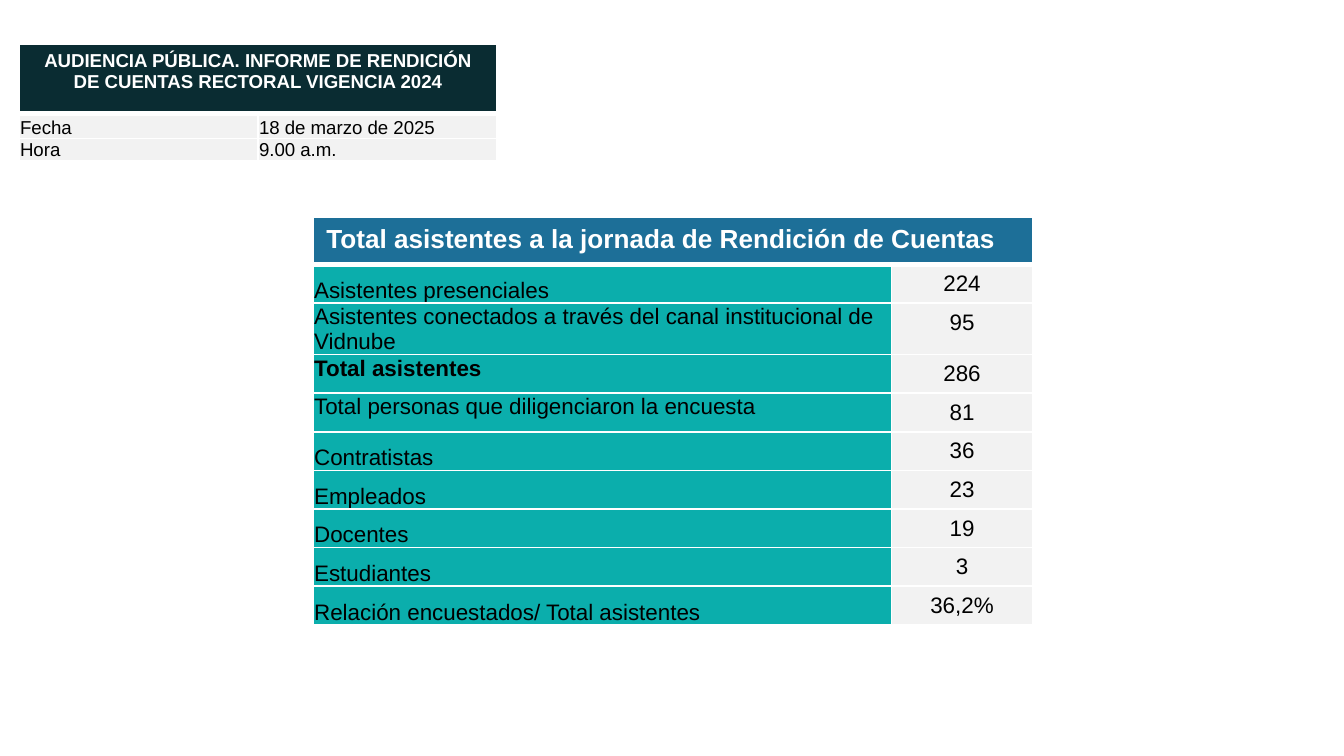
"""Build the attendance slide for the public accountability hearing."""
from lxml.etree import SubElement
from pptx import Presentation
from pptx.dml.color import RGBColor
from pptx.enum.text import MSO_ANCHOR, PP_ALIGN
from pptx.oxml.ns import qn
from pptx.util import Pt

THEME = {
    "font": "Arial", "white": "FFFFFF", "black": "000000", "grey": "F2F2F2",
    "dark": "0A2C32", "blue": "1D6F98", "teal": "0BAEAC",
    "small": 10, "body": 12, "head": 14, "thin": 1, "thick": 3,
}
EVENT = {
    "title": "AUDIENCIA PÚBLICA. INFORME DE RENDICIÓN DE CUENTAS RECTORAL VIGENCIA 2024",
    "rows": [("Fecha", "18 de marzo de 2025"), ("Hora", "9.00 a.m.")],
}
COUNT = {
    "title": "Total asistentes a la jornada de Rendición de Cuentas",
    "rows": [
        ("Asistentes presenciales", "224"),
        ("Asistentes conectados a través del canal institucional de Vidnube", "95"),
        ("Total asistentes", "286"),
        ("Total personas que diligenciaron la encuesta", "81"),
        ("Contratistas", "36"),
        ("Empleados", "23"),
        ("Docentes", "19"),
        ("Estudiantes", "3"),
        ("Relación encuestados/ Total asistentes", "36,2%"),
    ],
}
BOLD = {"Total asistentes"}
UPPER = BOLD | {"Total personas que diligenciaron la encuesta"}


def write(cell, text, size, color="black", bold=False, align=PP_ALIGN.LEFT,
          anchor=MSO_ANCHOR.TOP, tight=False):
    para = cell.text_frame.paragraphs[0]
    para.alignment = align
    run = para.add_run()
    run.text = text
    run.font.name = THEME["font"]
    run.font.size = Pt(size)
    run.font.bold = bold
    run.font.color.rgb = RGBColor.from_string(THEME[color])
    cell.vertical_anchor = anchor
    if tight:
        cell.margin_left = cell.margin_top = cell.margin_right = Pt(0.7)
        cell.margin_bottom = Pt(0)


def paint(cell, fill, top, bottom):
    props = cell._tc.get_or_add_tcPr()
    thin = THEME["thin"]
    for tag, width in (("lnL", thin), ("lnR", thin), ("lnT", top), ("lnB", bottom)):
        line = SubElement(props, qn(f"a:{tag}"), w=str(Pt(width)))
        solid = SubElement(line, qn("a:solidFill"))
        SubElement(solid, qn("a:srgbClr"), val=THEME["white"])
    cell.fill.solid()
    cell.fill.fore_color.rgb = RGBColor.from_string(THEME[fill])


def grid(slide, data, left, top, widths, heights, fills):
    frame = slide.shapes.add_table(
        len(heights), len(widths), Pt(left), Pt(top), Pt(sum(widths)), Pt(sum(heights)))
    table = frame.table
    table.horz_banding = False
    for col, width in zip(table.columns, widths):
        col.width = Pt(width)
    for i, (row, height) in enumerate(zip(table.rows, heights)):
        row.height = Pt(height)
        for j, cell in enumerate(row.cells):
            paint(cell, fills[0] if i == 0 else fills[j + 1],
                  THEME["thick" if i == 1 else "thin"],
                  THEME["thick" if i == 0 else "thin"])
    table.cell(0, 0).merge(table.cell(0, 1))
    return table


def event(slide):
    table = grid(slide, EVENT, 10.1, 23.8, (128, 128), (37, 13.4, 11.8),
                 ("dark", "grey", "grey"))
    size = THEME["small"]
    write(table.cell(0, 0), EVENT["title"], size, color="white", bold=True,
          align=PP_ALIGN.CENTER)
    for i, row in enumerate(EVENT["rows"], 1):
        for j, text in enumerate(row):
            write(table.cell(i, j), text, size, anchor=MSO_ANCHOR.BOTTOM, tight=True)


def count(slide):
    heights = [25, 20.8, 27.6] + [20.7] * (len(COUNT["rows"]) - 2)
    table = grid(slide, COUNT, 167.6, 116.6, (310, 75.6), heights,
                 ("blue", "teal", "grey"))
    write(table.cell(0, 0), COUNT["title"], THEME["head"], color="white", bold=True)
    size = THEME["body"]
    for i, (label, value) in enumerate(COUNT["rows"], 1):
        write(table.cell(i, 0), label, size, bold=label in BOLD, tight=True,
              anchor=MSO_ANCHOR.TOP if label in UPPER else MSO_ANCHOR.BOTTOM)
        write(table.cell(i, 1), value, size, align=PP_ALIGN.CENTER)


def main():
    deck = Presentation()
    deck.slide_width, deck.slide_height = Pt(720), Pt(405)
    slide = deck.slides.add_slide(deck.slide_layouts[6])
    event(slide)
    count(slide)
    deck.save("out.pptx")


if __name__ == "__main__":
    main()
